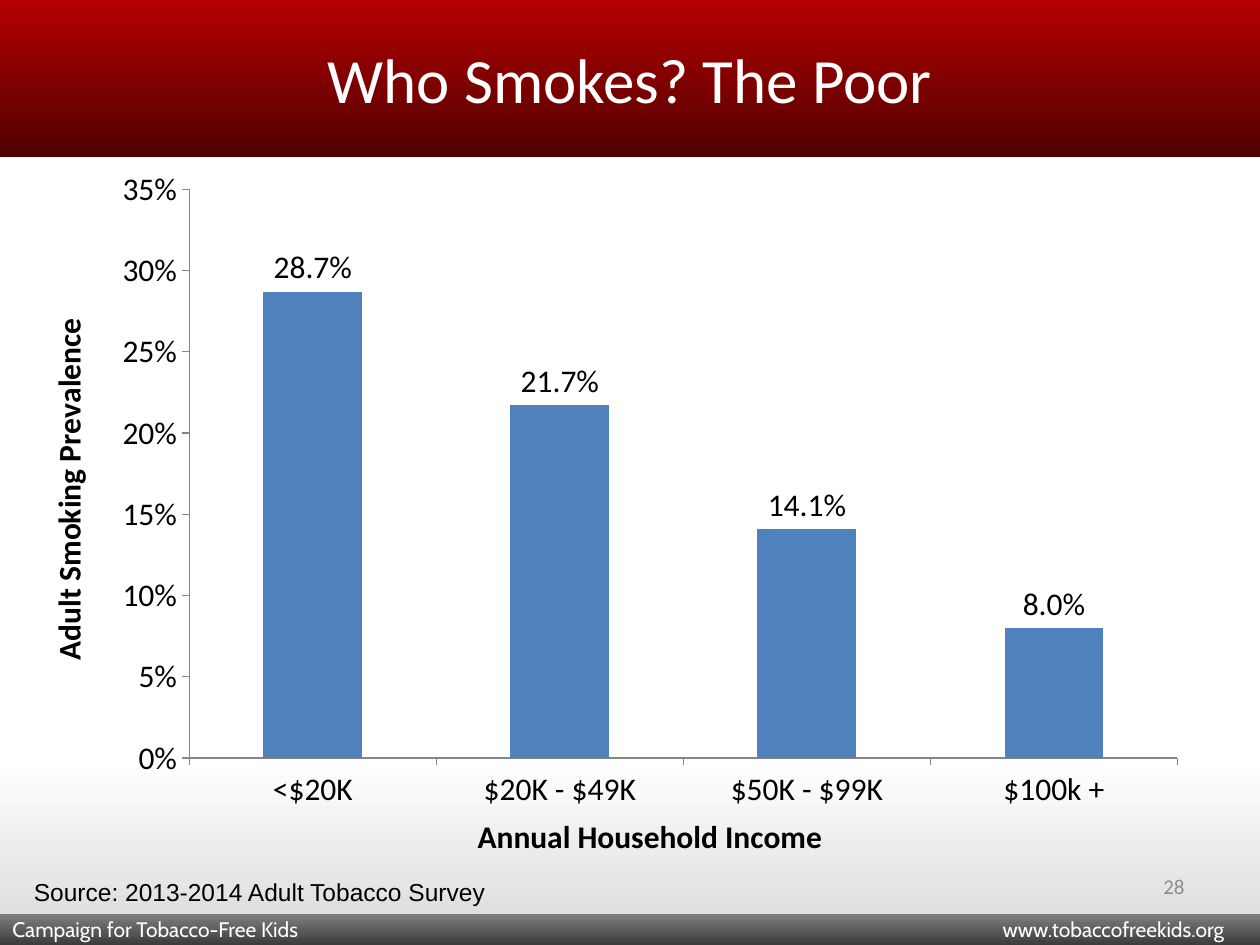
from lxml import etree
from pptx import Presentation
from pptx.chart.data import CategoryChartData
from pptx.dml.color import RGBColor
from pptx.enum.chart import XL_CHART_TYPE, XL_LABEL_POSITION, XL_TICK_MARK
from pptx.enum.shapes import MSO_SHAPE
from pptx.enum.text import MSO_ANCHOR, PP_ALIGN
from pptx.oxml import parse_xml
from pptx.oxml.ns import nsdecls, qn
from pptx.util import Inches, Pt

COLUMNS = XL_CHART_TYPE.COLUMN_CLUSTERED
OUTSIDE_END = XL_LABEL_POSITION.OUTSIDE_END
TICK_OUT = XL_TICK_MARK.OUTSIDE
RECT = MSO_SHAPE.RECTANGLE
TOP, MIDDLE = MSO_ANCHOR.TOP, MSO_ANCHOR.MIDDLE
LEFT, CENTER, RIGHT = PP_ALIGN.LEFT, PP_ALIGN.CENTER, PP_ALIGN.RIGHT

W, H = 10, 7.5
HEADER_H, FOOTER_H = H / 6, H / 30
FOOTER_TAB = 9.62

BACKGROUND = [(0.8, "FFFFFF"), (1, "D9D9D9")]
BARS = {
    "header": ((0, 0, W, HEADER_H), [(0, "B40000"), (1, "500000")]),
    "footer": ((0, H - FOOTER_H, W, FOOTER_H), [(0, "808080"), (1, "3C3C3C")]),
}
FOOTER = "Campaign for Tobacco-Free Kids\twww.tobaccofreekids.org"
FOOTER_FONT = {"name": "Cabin", "size": Pt(12), "color": "FFFFFF"}
TEXTS = [
    ("Who Smokes? The Poor", (1.4, 0, 7.2, HEADER_H), CENTER, MIDDLE,
     {"name": "Calibri", "size": Pt(36), "color": "FFFFFF"}),
    ("28", (7.17, 6.83, 2.33, 0.4), RIGHT, MIDDLE,
     {"name": "Calibri", "size": Pt(12), "color": "8C8C8C"}),
    ("Source: 2013-2014 Adult Tobacco Survey", (0.17, 6.91, 3.8, 0.34), LEFT, TOP,
     {"name": "Arial", "size": Pt(14), "color": "000000"}),
]

CHART_BOX = (0.17, 1.29, 9.73, 5.58)
PREVALENCE = {"<$20K": 0.287, "$20K - $49K": 0.217, "$50K - $99K": 0.141, "$100k +": 0.08}
CHART_FONT = {"name": "Calibri", "size": Pt(18), "color": "000000"}
PLOT = {"layoutTarget": "inner", "xMode": "edge", "yMode": "edge",
        "x": 0.137, "y": 0.038, "w": 0.806, "h": 0.809}
VALUE_SCALE = {"minimum_scale": 0, "maximum_scale": 0.35, "major_unit": 0.05}
BAR_COLOR, AXIS_COLOR = "4F81BD", "868686"


def rgb(color):
    return RGBColor.from_string(color)


def inches(box):
    return [Inches(v) for v in box]


def set_font(font, style):
    for key, value in style.items():
        if key == "color":
            font.color.rgb = rgb(value)
        else:
            setattr(font, key, value)


def set_gradient(fill, stops):
    fill.gradient()
    fill.gradient_angle = 270
    for stop, (position, color) in zip(fill.gradient_stops, stops):
        stop.position = position
        stop.color.rgb = rgb(color)


def write(sp, text, align, anchor, style):
    tf = sp.text_frame
    tf.word_wrap = True
    tf.vertical_anchor = anchor
    p = tf.paragraphs[0]
    p.alignment = align
    r = p.add_run()
    r.text = text
    set_font(r.font, style)
    return p


def add_bar(s, box, stops):
    sp = s.shapes.add_shape(RECT, *inches(box))
    sp.shadow.inherit = False
    sp.line.fill.background()
    set_gradient(sp.fill, stops)
    return sp


def format_axis(axis, title):
    axis.has_major_gridlines = False
    axis.major_tick_mark = TICK_OUT
    axis.format.line.color.rgb = rgb(AXIS_COLOR)
    r = axis.axis_title.text_frame.paragraphs[0].add_run()
    r.text = title
    set_font(r.font, {**CHART_FONT, "bold": True})


def place_plot(chart):
    area = chart.plots[0]._element.getparent()
    for old in area.findall(qn("c:layout")):
        area.remove(old)
    layout = parse_xml(f"<c:layout {nsdecls('c')}><c:manualLayout/></c:layout>")
    for tag, value in PLOT.items():
        etree.SubElement(layout[0], qn(f"c:{tag}")).set("val", str(value))
    area.insert(0, layout)


def add_prevalence_chart(s):
    data = CategoryChartData(number_format="0.0%")
    data.categories = list(PREVALENCE)
    data.add_series("Series 1", list(PREVALENCE.values()))
    chart = s.shapes.add_chart(COLUMNS, *inches(CHART_BOX), data).chart
    chart.has_legend = chart.has_title = False
    set_font(chart.font, CHART_FONT)

    format_axis(chart.category_axis, "Annual Household Income")
    axis = chart.value_axis
    format_axis(axis, "Adult Smoking Prevalence")
    for key, value in VALUE_SCALE.items():
        setattr(axis, key, value)
    axis.tick_labels.number_format = "0%"
    axis.tick_labels.number_format_is_linked = False

    plot = chart.plots[0]
    plot.gap_width = 150
    plot.vary_by_categories = False
    fill = plot.series[0].format.fill
    fill.solid()
    fill.fore_color.rgb = rgb(BAR_COLOR)
    labels = plot.series[0].data_labels
    labels.show_value = True
    labels.position = OUTSIDE_END
    labels.number_format = "0.0%"
    labels.number_format_is_linked = False
    set_font(labels.font, CHART_FONT)
    place_plot(chart)


def main():
    prs = Presentation()
    prs.slide_width, prs.slide_height = inches((W, H))
    s = prs.slides.add_slide(prs.slide_layouts[6])
    set_gradient(s.background.fill, BACKGROUND)

    bars = {name: add_bar(s, *bar) for name, bar in BARS.items()}
    p = write(bars["footer"], FOOTER, LEFT, MIDDLE, FOOTER_FONT)
    tabs = etree.SubElement(p._p.get_or_add_pPr(), qn("a:tabLst"))
    etree.SubElement(tabs, qn("a:tab"), pos=str(Inches(FOOTER_TAB)), algn="r")

    add_prevalence_chart(s)
    for text, box, align, anchor, style in TEXTS:
        write(s.shapes.add_textbox(*inches(box)), text, align, anchor, style)
    prs.save("out.pptx")


if __name__ == "__main__":
    main()
